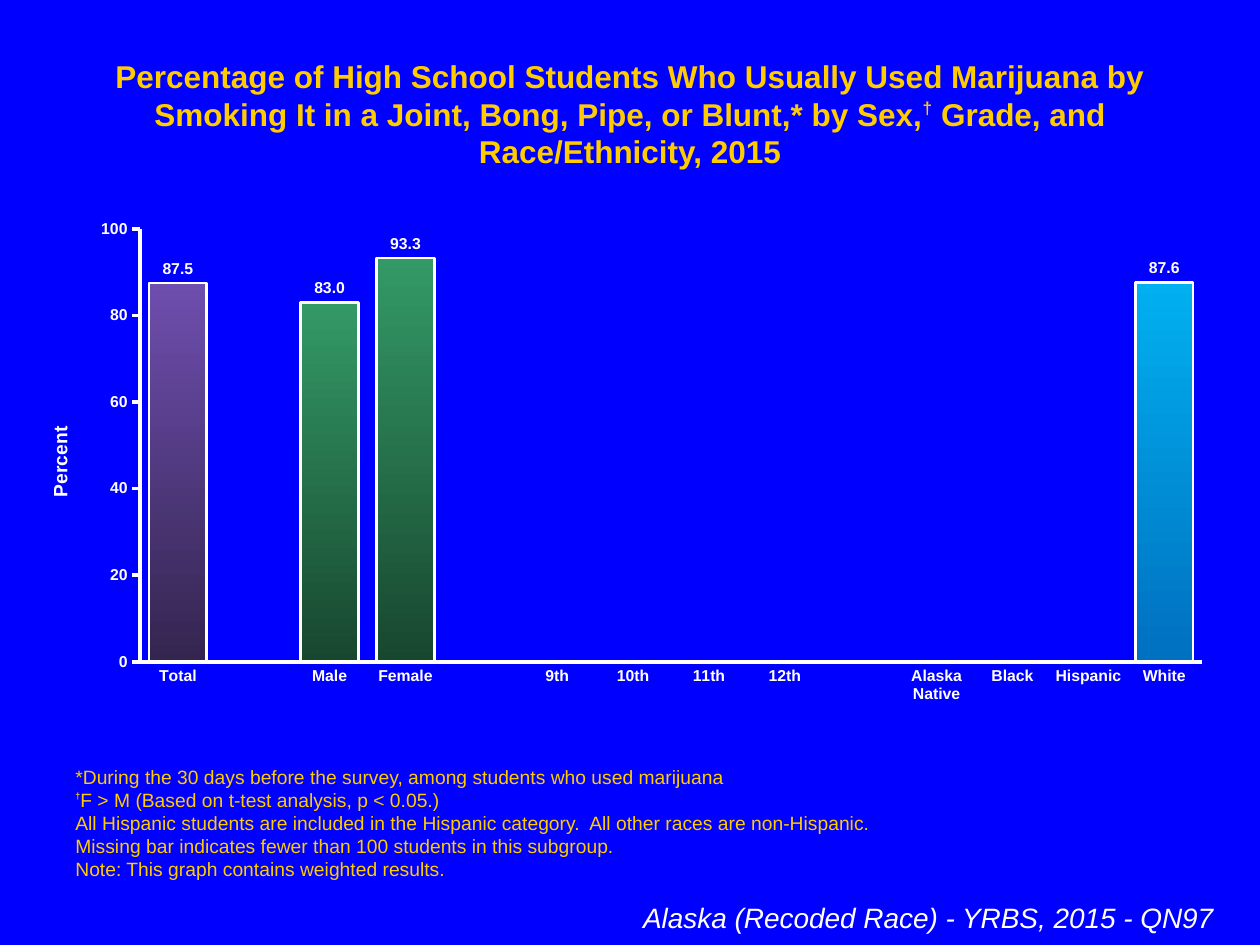
from lxml import etree
from pptx import Presentation
from pptx.chart.data import CategoryChartData
from pptx.dml.color import RGBColor
from pptx.enum import chart as charts, text
from pptx.oxml import parse_xml
from pptx.oxml.ns import nsdecls
from pptx.util import Cm, Pt

BLUE = RGBColor(0x00, 0x00, 0xFF)
GOLD = RGBColor(0xFF, 0xCC, 0x00)
WHITE = RGBColor(0xFF, 0xFF, 0xFF)
TOTAL = (RGBColor(0x6E, 0x4E, 0xAE), RGBColor(0x34, 0x25, 0x4F))
SEX = (RGBColor(0x33, 0x99, 0x66), RGBColor(0x18, 0x47, 0x2F))
GRADE = (RGBColor(0xFF, 0xC0, 0x00), RGBColor(0xB6, 0x6D, 0x00))
RACE = (RGBColor(0x00, 0xB0, 0xF0), RGBColor(0x00, 0x70, 0xC0))


def style(font, size, color, bold=False):
    font.name = "Arial"
    font.size = Pt(size)
    font.color.rgb = color
    font.bold = bold


def add_span(para, words, size, color, bold=False, raised=0):
    span = para.add_run()
    span.text = words
    style(span.font, size, color, bold)
    if raised:
        span.font._element.set("baseline", str(raised * 1000))
    return span


deck = Presentation()
deck.slide_width, deck.slide_height = Cm(25.4), Cm(19.05)
page = deck.slides.add_slide(deck.slide_layouts[5])
page.background.fill.solid()
page.background.fill.fore_color.rgb = BLUE

# Title
title = page.shapes.title
title.left, title.top, title.width, title.height = Cm(1.27), Cm(1.02), Cm(22.86), Cm(2.54)
title.text_frame.word_wrap = True
title.text_frame.auto_size = text.MSO_AUTO_SIZE.NONE
title.text_frame.vertical_anchor = text.MSO_ANCHOR.TOP
para = title.text_frame.paragraphs[0]
para.alignment = text.PP_ALIGN.CENTER
add_span(para, "Percentage of High School Students Who Usually Used Marijuana by "
         "Smoking It in a Joint, Bong, Pipe, or Blunt,* by Sex,", 18, GOLD, True)
add_span(para, "†", 17, GOLD, True, raised=40)
add_span(para, " Grade, and Race/Ethnicity, 2015", 18, GOLD, True)

# Chart data: one row per bar, empty rows separate the groups
bars = [
    ("Total", 87.5, TOTAL), ("", None, None),
    ("Male", 83.0, SEX), ("Female", 93.3, SEX), ("", None, None),
    ("9th", None, GRADE), ("10th", None, GRADE), ("11th", None, GRADE),
    ("12th", None, GRADE), ("", None, None),
    ("Alaska Native", None, RACE), ("Black", None, RACE),
    ("Hispanic", None, RACE), ("White", 87.6, RACE),
]
data = CategoryChartData()
data.categories = [name for name, value, colors in bars]
data.add_series("Series 1", [value for name, value, colors in bars])
chart = page.shapes.add_chart(charts.XL_CHART_TYPE.COLUMN_CLUSTERED, Cm(0.43), Cm(4.24),
                              Cm(24.28), Cm(10.16), data).chart
chart.has_legend = False
chart.has_title = False
style(chart.font, 18, WHITE)

# Plot area position, as fractions of the chart
layout = parse_xml(f'<c:layout {nsdecls("c")}><c:manualLayout/></c:layout>')
settings = [("layoutTarget", "inner"), ("xMode", "edge"), ("yMode", "edge"),
            ("x", "0.0985"), ("y", "0.037"), ("w", "0.882"), ("h", "0.859")]
for name, value in settings:
    etree.SubElement(layout[0], "{%s}%s" % (layout.nsmap["c"], name)).set("val", value)
plot_area = chart._chartSpace.chart.plotArea
for old in plot_area.findall("{%s}layout" % layout.nsmap["c"]):
    plot_area.remove(old)
plot_area.insert(0, layout)

# Axes
for axis in (chart.category_axis, chart.value_axis):
    axis.has_major_gridlines = False
    axis.minor_tick_mark = charts.XL_TICK_MARK.NONE
    axis.format.line.color.rgb = WHITE
    axis.format.line.width = Pt(2)
    style(axis.tick_labels.font, 9, WHITE, True)
chart.category_axis.major_tick_mark = charts.XL_TICK_MARK.NONE
percent = chart.value_axis
percent.major_tick_mark = charts.XL_TICK_MARK.OUTSIDE
percent.minimum_scale, percent.maximum_scale, percent.major_unit = 0, 100, 20
percent.axis_title.text_frame.text = "Percent"
style(percent.axis_title.text_frame.paragraphs[0].runs[0].font, 11, WHITE, True)

# Bars and their labels
plot = chart.plots[0]
plot.gap_width, plot.overlap, plot.vary_by_categories = 31, 100, False
series = plot.series[0]
for index, (name, value, colors) in enumerate(bars):
    if colors:
        look = series.points[index].format
        look.fill.gradient()
        look.fill.gradient_angle = 270
        for stop, color in zip(look.fill.gradient_stops, colors):
            stop.color.rgb = color
        look.line.color.rgb = WHITE
        look.line.width = Pt(1.5)
plot.has_data_labels = True
labels = plot.data_labels
labels.show_value = True
labels.number_format, labels.number_format_is_linked = "#,##0.0", False
labels.position = charts.XL_LABEL_POSITION.OUTSIDE_END
style(labels.font, 9, WHITE, True)

# Footnotes
notes = page.shapes.add_textbox(Cm(1.27), Cm(15.29), Cm(22.86), Cm(2.59)).text_frame
notes.word_wrap = True
notes.vertical_anchor = text.MSO_ANCHOR.BOTTOM
lines = [
    "*During the 30 days before the survey, among students who used marijuana",
    "†F > M (Based on t-test analysis, p < 0.05.)",
    "All Hispanic students are included in the Hispanic category.  All other races are non-Hispanic.",
    "Missing bar indicates fewer than 100 students in this subgroup.",
    "Note: This graph contains weighted results.",
]
for index, line in enumerate(lines):
    para = notes.add_paragraph() if index else notes.paragraphs[0]
    if line.startswith("†"):
        add_span(para, "†", 9, GOLD, True, raised=50)
    add_span(para, line.lstrip("†"), 11, GOLD)

# Survey name
survey = page.shapes.add_textbox(Cm(0.84), Cm(18.03), Cm(23.88), Cm(0.94)).text_frame
survey.word_wrap = True
para = survey.paragraphs[0]
para.alignment = text.PP_ALIGN.RIGHT
add_span(para, "Alaska (Recoded Race) - YRBS, 2015 - QN97", 16, WHITE).font.italic = True

deck.save("out.pptx")
